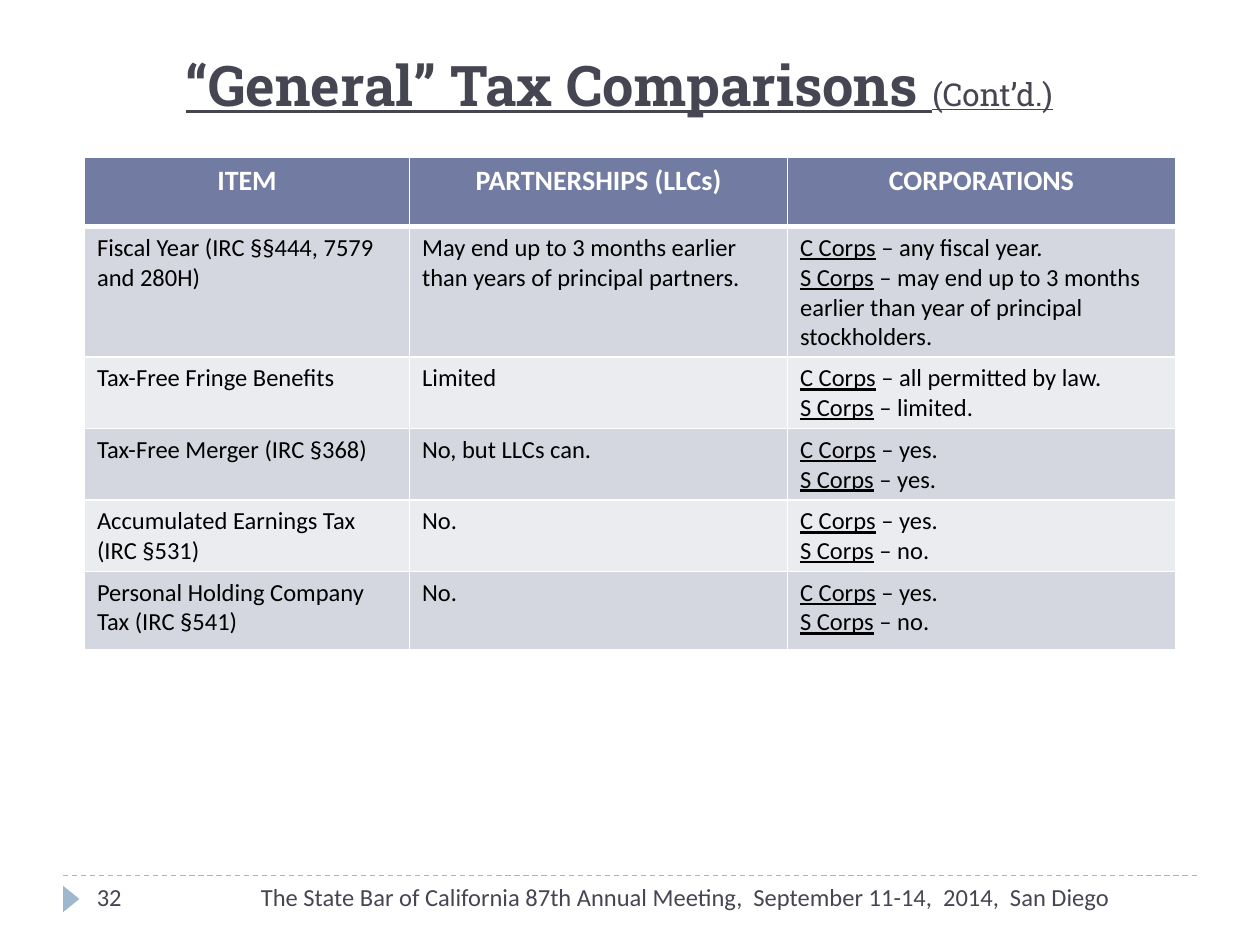
from lxml.etree import SubElement
from pptx import Presentation
from pptx.dml.color import RGBColor
from pptx.enum.dml import MSO_LINE
from pptx.enum.shapes import MSO_CONNECTOR, MSO_SHAPE
from pptx.enum.text import MSO_ANCHOR, PP_ALIGN
from pptx.oxml import parse_xml
from pptx.oxml.ns import nsdecls, qn
from pptx.util import Inches, Pt

INK, ACCENT, WHITE, BLACK = "464653", "9FB8CD", "FFFFFF", "000000"
HEADER_FILL, BAND_FILLS = "727CA3", ("D5D7E0", "EBECF0")

TITLE = "“General” Tax Comparisons "
CONTINUED = "(Cont’d.)"
FOOTER = "The State Bar of California 87th Annual Meeting,  September 11-14,  2014,  San Diego"
PAGE_NUMBER = "32"
HEADERS = ("ITEM", "PARTNERSHIPS (LLCs)", "CORPORATIONS")
COMPARISONS = [
    ("Fiscal Year (IRC §§444, 7579 and 280H)",
     "May end up to 3 months earlier than years of principal partners.",
     "any fiscal year.",
     "may end up to 3 months earlier than year of principal stockholders."),
    ("Tax-Free Fringe Benefits", "Limited", "all permitted by law.", "limited."),
    ("Tax-Free Merger (IRC §368)", "No, but LLCs can.", "yes.", "yes."),
    ("Accumulated Earnings Tax (IRC §531)", "No.", "yes.", "no."),
    ("Personal Holding Company Tax (IRC §541)", "No.", "yes.", "no."),
]
COLUMN_WIDTHS = (2.58, 3, 3.08)
ROW_HEIGHTS = (0.55, 0.5, 0.25, 0.52, 0.52, 0.62)


def color(value):
    return RGBColor.from_string(value)


def add_span(para, text, size, ink, font="Calibri", bold=False, underline=False):
    span = para.add_run()
    span.text = text
    span.font.name = font
    span.font.size = Pt(size)
    span.font.color.rgb = color(ink)
    span.font.bold = bold
    span.font.underline = underline


def place(shape, left, top, width, height):
    shape.left, shape.top = Inches(left), Inches(top)
    shape.width, shape.height = Inches(width), Inches(height)


def add_title(page):
    title = page.shapes.title
    place(title, 0.51, 0.33, 8.81, 0.67)
    title.text_frame.vertical_anchor = MSO_ANCHOR.MIDDLE
    para = title.text_frame.paragraphs[0]
    para.alignment = PP_ALIGN.CENTER
    para.space_after = Pt(12)
    add_span(para, TITLE, 32, INK, "Roboto Slab", True, True)
    add_span(para, CONTINUED, 18, INK, "Roboto Slab", False, True)


def add_footer_text(page, text, left, width, alignment):
    box = page.shapes.add_textbox(Inches(left), Inches(6.95), Inches(width), Inches(0.4))
    box.text_frame.word_wrap = True
    para = box.text_frame.paragraphs[0]
    para.alignment = alignment
    add_span(para, text, 14, INK)


def add_footer(page):
    rule = page.shapes.add_connector(
        MSO_CONNECTOR.STRAIGHT, Inches(0.5), Inches(6.95), Inches(9.5), Inches(6.95))
    rule.line.color.rgb = color(ACCENT)
    rule.line.width = Pt(0.75)
    rule.line.dash_style = MSO_LINE.DASH
    SubElement(rule._element.spPr, qn("a:effectLst"))

    marker = page.shapes.add_shape(
        MSO_SHAPE.ISOSCELES_TRIANGLE, Inches(0.46), Inches(7.07), Inches(0.21), Inches(0.13))
    marker.rotation = 90
    marker.shadow.inherit = False
    marker.fill.solid()
    marker.fill.fore_color.rgb = color(ACCENT)
    marker.line.fill.background()

    add_footer_text(page, FOOTER, 1.58, 7.33, PP_ALIGN.RIGHT)
    add_footer_text(page, PAGE_NUMBER, 0.67, 2.17, PP_ALIGN.LEFT)


def style_cell(cell, fill, top, bottom):
    cell.fill.solid()
    cell.fill.fore_color.rgb = color(fill)
    properties = cell._tc.get_or_add_tcPr()
    for index, (side, points) in enumerate((("L", 1), ("R", 1), ("T", top), ("B", bottom))):
        properties.insert(index, parse_xml(
            f'<a:ln{side} {nsdecls("a")} w="{Pt(points)}"><a:solidFill>'
            f'<a:srgbClr val="{WHITE}"/></a:solidFill></a:ln{side}>'))


def add_comparison_table(page):
    table = page.shapes.add_table(
        len(ROW_HEIGHTS), len(COLUMN_WIDTHS), Inches(0.67), Inches(1.25),
        Inches(sum(COLUMN_WIDTHS)), Inches(sum(ROW_HEIGHTS))).table
    for column, width in zip(table.columns, COLUMN_WIDTHS):
        column.width = Inches(width)
    for row, height in zip(table.rows, ROW_HEIGHTS):
        row.height = Inches(height)

    for cell, header in zip(table.rows[0].cells, HEADERS):
        style_cell(cell, HEADER_FILL, 1, 3)
        para = cell.text_frame.paragraphs[0]
        para.alignment = PP_ALIGN.CENTER
        add_span(para, header, 16, WHITE, bold=True)

    for index, (item, partnerships, c_corps, s_corps) in enumerate(COMPARISONS):
        cells = list(table.rows[index + 1].cells)
        for cell in cells:
            style_cell(cell, BAND_FILLS[index % 2], 3 if index == 0 else 1, 1)
        for cell, text in zip(cells, (item, partnerships)):
            add_span(cell.text_frame.paragraphs[0], text, 14, BLACK)
        frame = cells[2].text_frame
        paras = (frame.paragraphs[0], frame.add_paragraph())
        for para, kind, rule in zip(paras, ("C Corps", "S Corps"), (c_corps, s_corps)):
            add_span(para, kind, 14, BLACK, underline=True)
            add_span(para, f" – {rule}", 14, BLACK)


def main():
    deck = Presentation()
    deck.slide_width, deck.slide_height = Inches(10), Inches(7.5)
    page = deck.slides.add_slide(deck.slide_layouts[5])
    add_footer(page)
    add_title(page)
    add_comparison_table(page)
    deck.save("out.pptx")


if __name__ == "__main__":
    main()
